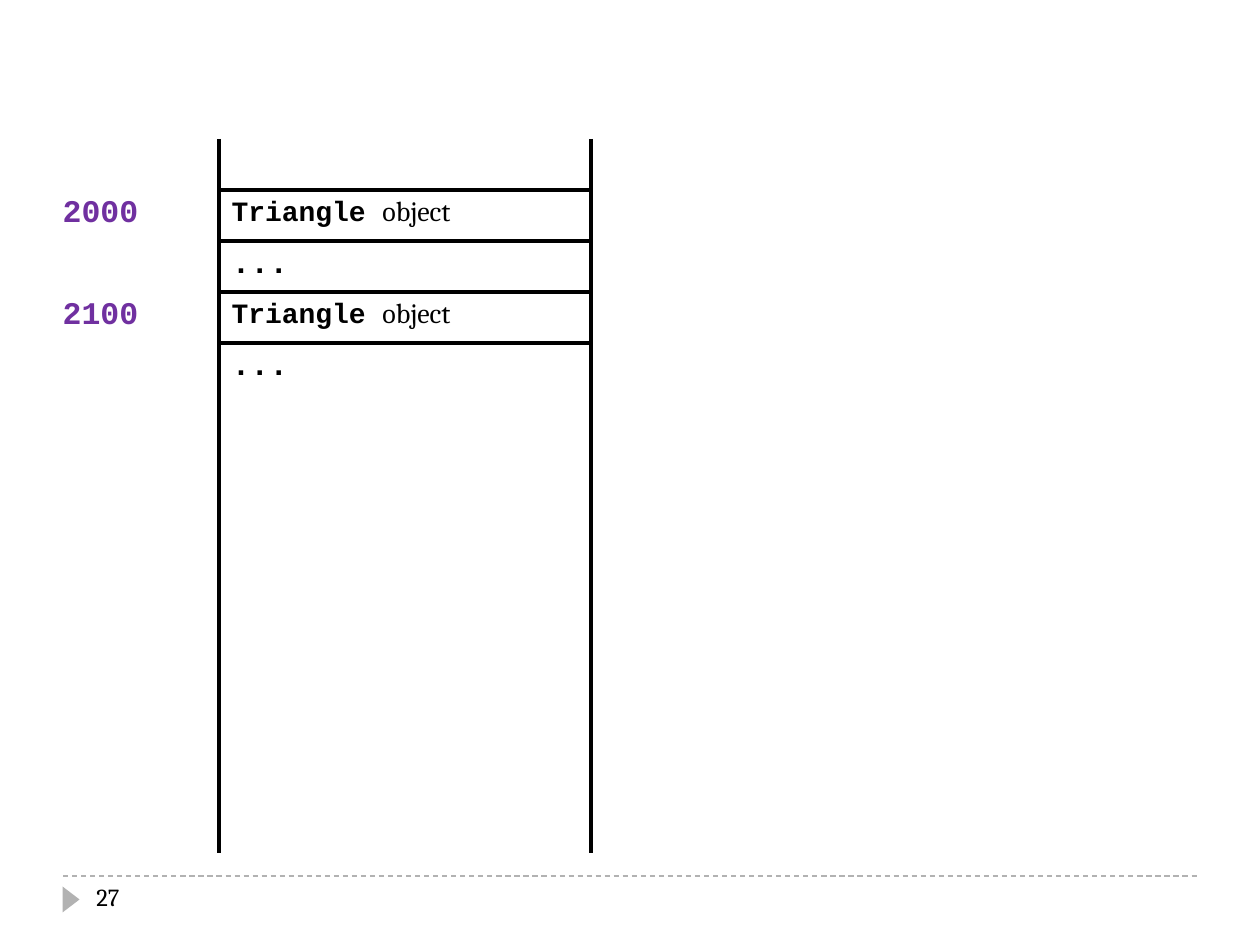
from dataclasses import dataclass

from lxml.etree import SubElement
from pptx import Presentation
from pptx.dml.color import RGBColor as RGB
from pptx.enum.dml import MSO_LINE
from pptx.enum.shapes import MSO_CONNECTOR as CONN, MSO_SHAPE as SHAPE
from pptx.oxml import parse_xml
from pptx.oxml.ns import nsdecls, qn
from pptx.util import Pt

PX = 914400 / 126


@dataclass(frozen=True)
class Theme:
    """Colours, fonts, type sizes and line widths."""
    ink: str = "000000"
    address: str = "7030A0"
    footer: str = "B2B2B2"
    code: str = "Courier New"
    body: str = "Cambria"
    large: int = 18
    medium: int = 16
    small: int = 14
    border: float = 2.25
    rule: float = 0.75


T = Theme()
ADDRESS = dict(size=Pt(T.large), name=T.code, bold=True, color=T.address)
DOTS = ADDRESS | dict(color=T.ink)
CLASS = DOTS | dict(size=Pt(T.medium))
WORD = CLASS | dict(name=T.body, bold=False)
NUMBER = WORD | dict(size=Pt(T.small))

OBJECT = [("Triangle ", CLASS), ("object", WORD)]
GAP = [("...", DOTS)]
MEMORY = [("", []), ("2000", OBJECT), ("", GAP), ("2100", OBJECT), ("", GAP)] + [("", [])] * 9
RULED = range(1, 5)


def px(*values):
    """Turn pixels into EMU."""
    return [round(v * PX) for v in values]


def add_runs(tf, runs):
    """Write formatted runs into the first paragraph."""
    p = tf.paragraphs[0]
    for text, fmt in runs:
        r = p.add_run()
        r.text = text
        for key, value in fmt.items():
            if key == "color":
                r.font.color.rgb = RGB.from_string(value)
            else:
                setattr(r.font, key, value)


def set_borders(cell, sides):
    """Draw the named sides of a cell and clear the others."""
    pr = cell._tc.get_or_add_tcPr()
    for i, side in enumerate("LRTB"):
        paint = (f'<a:solidFill><a:srgbClr val="{T.ink}"/></a:solidFill>'
                 if side in sides else "<a:noFill/>")
        pr.insert(i, parse_xml(
            f'<a:ln{side} {nsdecls("a")} w="{Pt(T.border)}">{paint}</a:ln{side}>'))


def add_memory(s, x, y, widths, row_height):
    """Add the memory diagram as a table of addresses and contents."""
    table = s.shapes.add_table(
        len(MEMORY), 2, *px(x, y, sum(widths), row_height * len(MEMORY))).table
    table.first_row = table.horz_banding = False
    for column, width in zip(table.columns, widths):
        column.width, = px(width)
    for i, (address, content) in enumerate(MEMORY):
        table.rows[i].height, = px(row_height)
        label, slot = table.cell(i, 0), table.cell(i, 1)
        for cell in (label, slot):
            cell.fill.background()
        if address:
            add_runs(label.text_frame, [(address, ADDRESS)])
        add_runs(slot.text_frame, content)
        set_borders(label, "R")
        set_borders(slot, "LR" + "T" * (i in RULED) + "B" * (i + 1 in RULED))


def add_rule(s, x1, x2, y):
    """Add the dashed footer rule."""
    c = s.shapes.add_connector(CONN.STRAIGHT, *px(x1, y, x2, y))
    c.line.color.rgb = RGB.from_string(T.footer)
    c.line.width = Pt(T.rule)
    c.line.dash_style = MSO_LINE.DASH
    SubElement(c._element.spPr, qn("a:effectLst"))


def add_marker(s, *box):
    """Add the triangle that points to the page number."""
    sp = s.shapes.add_shape(SHAPE.ISOSCELES_TRIANGLE, *px(*box))
    sp.rotation = 90
    sp.shadow.inherit = False
    sp.fill.solid()
    sp.fill.fore_color.rgb = RGB.from_string(T.footer)
    sp.line.fill.background()


def add_text(s, box, runs):
    """Add a wrapping text box."""
    tf = s.shapes.add_textbox(*px(*box)).text_frame
    tf.word_wrap = True
    add_runs(tf, runs)


def main():
    """Build and save the slide."""
    prs = Presentation()
    prs.slide_width, prs.slide_height = px(1260, 945)
    s = prs.slides.add_slide(prs.slide_layouts.get_by_name("Blank"))
    add_rule(s, 63, 1197, 876)
    add_marker(s, 58, 891, 26, 17)
    add_text(s, (84, 876, 273, 50), [("27", NUMBER)])
    add_memory(s, 50, 139, (169, 372), 51)
    prs.save("out.pptx")


if __name__ == "__main__":
    main()
